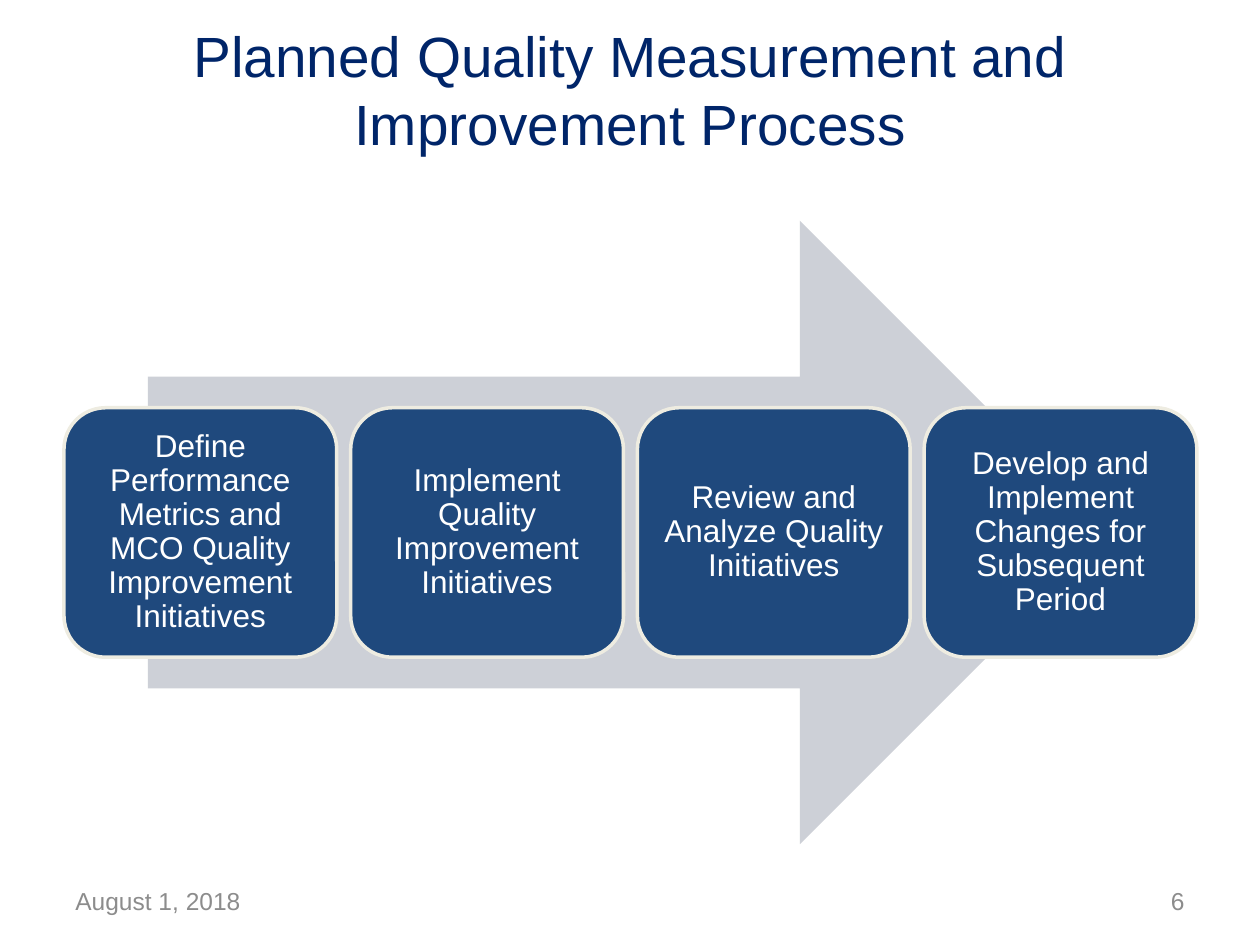
import pptx
import pptx.util
import pptx.dml.color
import pptx.enum.shapes
import pptx.enum.text

Cm = pptx.util.Cm
Pt = pptx.util.Pt
RGBColor = pptx.dml.color.RGBColor
ALIGN = pptx.enum.text.PP_ALIGN
MIDDLE = pptx.enum.text.MSO_ANCHOR.MIDDLE
SHAPE = pptx.enum.shapes.MSO_SHAPE

NAVY = RGBColor(0x00, 0x25, 0x69)
BLUE = RGBColor(0x1F, 0x49, 0x7D)
CREAM = RGBColor(0xEE, 0xEC, 0xE1)
SILVER = RGBColor(0xCD, 0xD0, 0xD7)
GRAY = RGBColor(0x8C, 0x8C, 0x8C)
WHITE = RGBColor(0xFF, 0xFF, 0xFF)


def write_text(shape, text, size, color, alignment):
    frame = shape.text_frame
    frame.word_wrap = True
    frame.auto_size = pptx.enum.text.MSO_AUTO_SIZE.NONE
    frame.vertical_anchor = MIDDLE
    frame.text = text
    para = frame.paragraphs[0]
    para.alignment = alignment
    para.font.name = "Arial"
    para.font.size = Pt(size)
    para.font.color.rgb = color
    return frame


deck = pptx.Presentation()
deck.slide_width = Cm(25.4)
deck.slide_height = Cm(19.05)
slide = deck.slides.add_slide(deck.slide_layouts[5])

title = slide.shapes.title
title.left, title.top, title.width, title.height = Cm(1.75), Cm(0.69), Cm(21.9), Cm(2.21)
write_text(title, "Planned Quality Measurement and Improvement Process", 32.4, NAVY, ALIGN.CENTER)

arrow = slide.shapes.add_shape(SHAPE.RIGHT_ARROW, Cm(2.98), Cm(4.45), Cm(19.43), Cm(12.57))
arrow.shadow.inherit = False
arrow.fill.solid()
arrow.fill.fore_color.rgb = SILVER
arrow.line.fill.background()

steps = [
    "Define Performance Metrics and MCO Quality Improvement Initiatives",
    "Implement Quality Improvement Initiatives",
    "Review and Analyze Quality Initiatives",
    "Develop and Implement Changes for Subsequent Period",
]
for index, step in enumerate(steps):
    box = slide.shapes.add_shape(
        SHAPE.ROUNDED_RECTANGLE, Cm(1.29 + 5.78 * index), Cm(8.22), Cm(5.5), Cm(5.03))
    box.shadow.inherit = False
    box.fill.solid()
    box.fill.fore_color.rgb = BLUE
    box.line.color.rgb = CREAM
    box.line.width = Pt(2)
    frame = write_text(box, step, 18, WHITE, ALIGN.CENTER)
    frame.margin_left = frame.margin_right = Cm(0.18)
    frame.margin_top = frame.margin_bottom = Cm(0.18)
    frame.paragraphs[0].line_spacing = 0.9

footers = [(1.27, "August 1, 2018", ALIGN.LEFT), (18.2, "6", ALIGN.RIGHT)]
for left, text, alignment in footers:
    footer = slide.shapes.add_textbox(Cm(left), Cm(17.66), Cm(5.93), Cm(1.01))
    write_text(footer, text, 14, GRAY, alignment)

deck.save("out.pptx")
